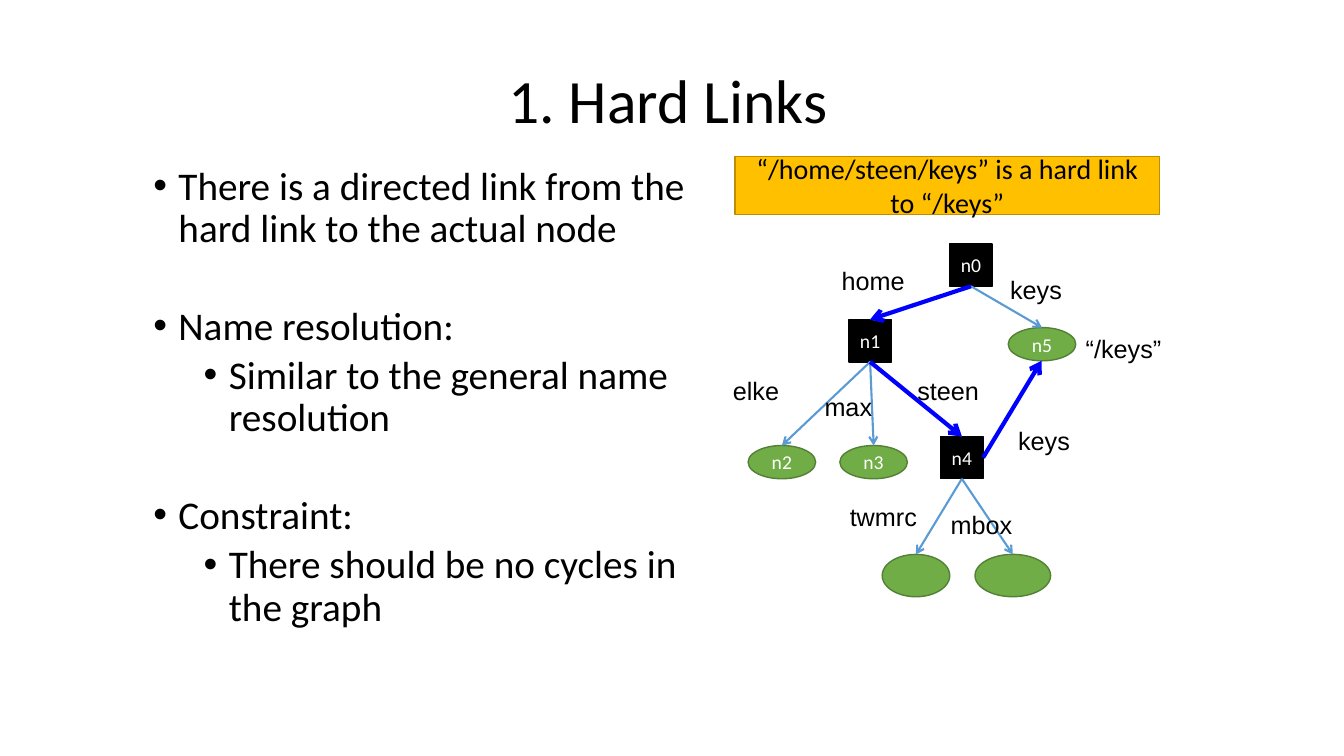
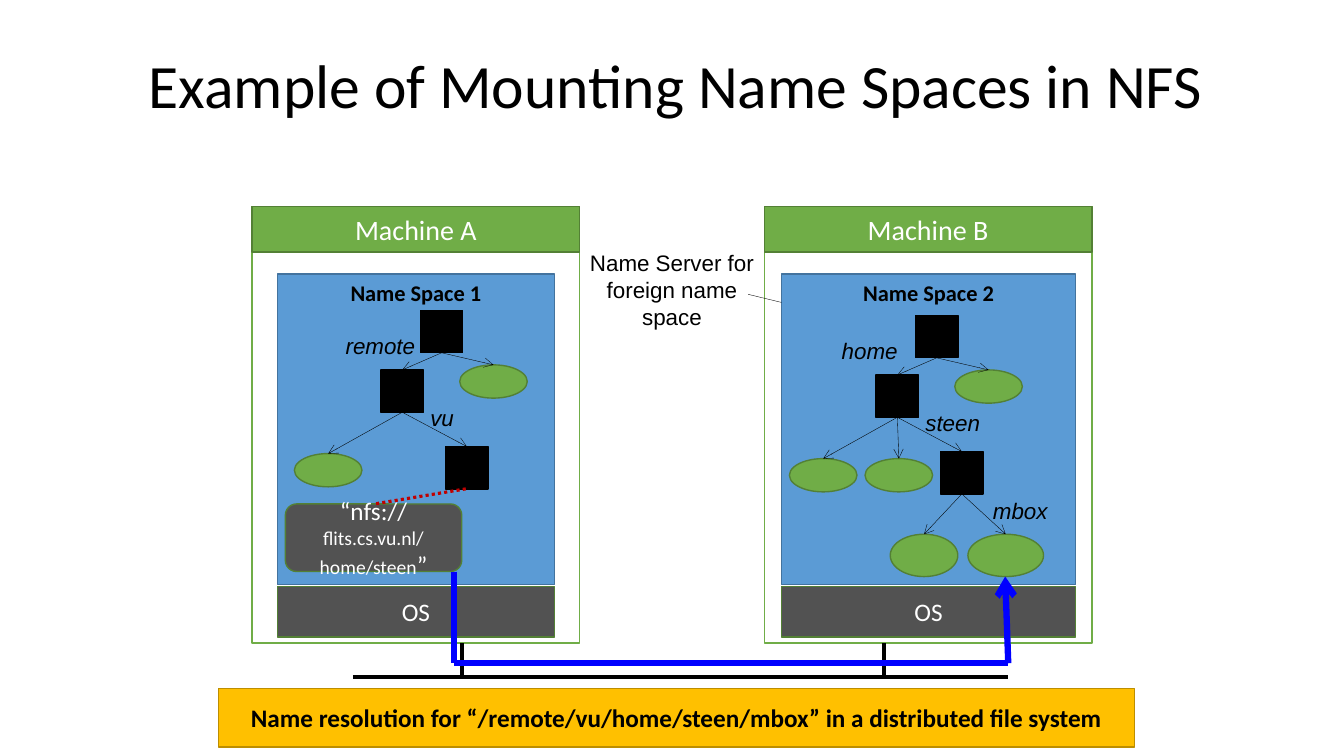
from lxml import etree
from pptx import Presentation
from pptx.dml.color import RGBColor
from pptx.enum.dml import MSO_LINE
from pptx.enum.shapes import MSO_CONNECTOR, MSO_SHAPE
from pptx.enum.text import MSO_ANCHOR, MSO_AUTO_SIZE, PP_ALIGN
from pptx.oxml.ns import qn
from pptx.util import Inches, Pt

BLACK = RGBColor(0x00, 0x00, 0x00)
WHITE = RGBColor(0xFF, 0xFF, 0xFF)
GOLD = RGBColor(0xFF, 0xC0, 0x00)
DARK_GOLD = RGBColor(0xBD, 0x8E, 0x00)
GREEN = RGBColor(0x70, 0xAD, 0x47)
DARK_GREEN = RGBColor(0x53, 0x80, 0x35)
SKY = RGBColor(0x5B, 0x9B, 0xD5)
DARK_SKY = RGBColor(0x43, 0x73, 0x9E)
GRAY = RGBColor(0x52, 0x52, 0x52)
BLUE = RGBColor(0x00, 0x00, 0xFF)
RED = RGBColor(0xC0, 0x00, 0x00)

RECT, OVAL, ROUND = MSO_SHAPE.RECTANGLE, MSO_SHAPE.OVAL, MSO_SHAPE.ROUNDED_RECTANGLE


def add_box(s, kind, x, y, w, h, runs=(), fill=None, edge=None, color=BLACK,
            font="Calibri", bold=False, italic=False,
            align=PP_ALIGN.CENTER, anchor=MSO_ANCHOR.MIDDLE):
    """Add a filled shape, or a text box if kind is None; runs are (text, size)."""
    at = [Inches(v) for v in (x, y, w, h)]
    if kind is None:
        sp = s.shapes.add_textbox(*at)
    else:
        sp = s.shapes.add_shape(kind, *at)
        sp.shadow.inherit = False
        sp.fill.solid()
        sp.fill.fore_color.rgb = fill
        sp.line.color.rgb = edge
        sp.line.width = Pt(1)
    tf = sp.text_frame
    tf.word_wrap = True
    tf.vertical_anchor = anchor
    p = tf.paragraphs[0]
    p.alignment = align
    for text, size in runs:
        r = p.add_run()
        r.text = text
        r.font.name, r.font.size = font, Pt(size)
        r.font.bold, r.font.italic = bold, italic
        r.font.color.rgb = color


def add_line(s, start, end, color, width, arrow=False, dash=None):
    c = s.shapes.add_connector(MSO_CONNECTOR.STRAIGHT,
                               *[Inches(v) for v in (*start, *end)])
    c.line.color.rgb = color
    c.line.width = Pt(width)
    if dash:
        c.line.dash_style = dash
    spPr = c.element.spPr
    if arrow:
        etree.SubElement(spPr.find(qn("a:ln")), qn("a:tailEnd"), type="arrow")
    etree.SubElement(spPr, qn("a:effectLst"))


prs = Presentation()
prs.slide_width, prs.slide_height = Inches(13.33), Inches(7.5)

# Titles
slides = []
for layout, title, at in [
    (1, "1. Hard Links", (1.92, 0.3, 9.41, 1.45)),
    (5, "Example of Mounting Name Spaces in NFS", (0.83, 0.3, 11.75, 1.15)),
]:
    s = prs.slides.add_slide(prs.slide_layouts[layout])
    sp = s.shapes.title
    sp.left, sp.top, sp.width, sp.height = [Inches(v) for v in at]
    tf = sp.text_frame
    tf.auto_size = MSO_AUTO_SIZE.NONE
    tf.vertical_anchor = MSO_ANCHOR.MIDDLE
    p = tf.paragraphs[0]
    p.alignment = PP_ALIGN.CENTER
    p.line_spacing = 0.9
    r = p.add_run()
    r.text = title
    r.font.name, r.font.size = "Calibri", Pt(44)
    r.font.color.rgb = BLACK
    slides.append(s)
links, mounting = slides

# Bullets on hard links
sp = links.placeholders[1]
sp.left, sp.top, sp.width, sp.height = [Inches(v) for v in (0.92, 1.6, 6.25, 5.42)]
tf = sp.text_frame
tf.auto_size = MSO_AUTO_SIZE.NONE
for i, (level, before, text) in enumerate([
    (0, 0, "There is a directed link from the hard link to the actual node"),
    (0, 39.5, "Name resolution:"),
    (1, 5, "Similar to the general name resolution"),
    (0, 39.5, "Constraint:"),
    (1, 5, "There should be no cycles in the graph"),
]):
    p = tf.add_paragraph() if i else tf.paragraphs[0]
    p.level = level
    pPr = p._p.get_or_add_pPr()
    pPr.set("marL", str(Inches(0.75 + 0.5 * level)))
    pPr.set("indent", str(Inches(-0.25)))
    etree.SubElement(pPr, qn("a:buChar"), char="•")
    p.line_spacing = 0.9
    p.space_before = Pt(before)
    r = p.add_run()
    r.text = text
    r.font.name, r.font.size = "Calibri", Pt(28)
    r.font.color.rgb = BLACK

# Gold banners
for s, at, text, size, bold in [
    (links, (7.29, 1.55, 4.21, 0.58),
     "“/home/steen/keys” is a hard link to “/keys”", 20, False),
    (mounting, (2.17, 6.83, 9.08, 0.58),
     "Name resolution for “/remote/vu/home/steen/mbox” in a distributed file system",
     18, True),
]:
    add_box(s, RECT, *at, [(text, size)], GOLD, DARK_GOLD, bold=bold)

# Machines and the network between them
for name, space, x, inner_x, inner_w, plug_x in [
    ("Machine B", "Name Space 2", 7.58, 7.75, 2.92, 8.77),
    ("Machine A", "Name Space 1", 2.5, 2.75, 2.75, 4.58),
]:
    add_box(mounting, RECT, x, 2.05, 3.25, 4.33, fill=WHITE, edge=GREEN)
    add_box(mounting, RECT, x, 2.05, 3.25, 0.45, [(name, 20)], GREEN, DARK_GREEN, WHITE)
    add_box(mounting, RECT, inner_x, 2.72, inner_w, 3.08, [(space, 16)], SKY, DARK_SKY,
            bold=True, anchor=MSO_ANCHOR.TOP)
    add_box(mounting, RECT, inner_x, 5.82, inner_w, 0.5, [("OS", 18)], GRAY, DARK_GREEN,
            WHITE)
    add_line(mounting, (plug_x, 6.38), (plug_x, 6.72), BLACK, 3)
add_line(mounting, (3.5, 6.72), (10, 6.72), BLACK, 3)

# Naming graphs: node sizes by kind, then places relative to each graph's origin
SIZES = {"dir": (0.42, 0.42), "leaf": (0.67, 0.33),
         "tall": (0.67, 0.42), "wide": (0.75, 0.42)}
link_nodes = {
    "n0": ("dir", 9.42, 2.42), "n1": ("dir", 8.42, 3.17), "n4": ("dir", 9.33, 4.33),
    "n5": ("leaf", 10, 3.25), "n2": ("leaf", 7.42, 4.42), "n3": ("leaf", 8.33, 4.42),
    "mbox": ("wide", 9.67, 5.5), "twmrc": ("tall", 8.75, 5.5),
}
link_edges = [("n0", "n5"), ("n0", "n1"), ("n1", "n3"), ("n1", "n4"), ("n1", "n2"),
              ("n4", "mbox"), ("n4", "twmrc")]
link_labels = [
    ("home", 8.25, 2.58), ("keys", 9.92, 2.67), ("steen", 9, 3.67), ("max", 8.08, 3.83),
    ("elke", 7.17, 3.67), ("“/keys”", 10.67, 3.26), ("twmrc", 8.33, 4.92),
    ("mbox", 9.33, 5), ("keys", 10, 4.17),
]
space_nodes = {
    "root": ("dir", 1.25, 0), "top": ("dir", 0.86, 0.59), "sub": ("dir", 1.5, 1.35),
    "right": ("leaf", 1.64, 0.54), "left": ("leaf", 0, 1.42),
}
space_edges = [("root", "right"), ("root", "top"), ("top", "sub"), ("top", "left")]
home_nodes = {**space_nodes, "middle": ("leaf", 0.75, 1.42),
              "mbox": ("wide", 1.77, 2.17), "other": ("tall", 1, 2.17)}
home_edges = space_edges + [("top", "middle"), ("sub", "mbox"), ("sub", "other")]

for s, x0, y0, nodes, edges, color, width, labels, size in [
    (links, 0, 0, link_nodes, link_edges, SKY, 1.5, link_labels, 18),
    (mounting, 7.83, 3.13, home_nodes, home_edges, BLACK, 0.25,
     [("home", 0.42, 0.17), ("steen", 1.25, 0.88), ("mbox", 1.92, 1.75)], 16),
    (mounting, 2.92, 3.08, space_nodes, space_edges, BLACK, 0.25,
     [("remote", 0.41, 0.17), ("vu", 1.25, 0.88)], 16),
]:
    tops, bottoms = {}, {}
    for name, (kind, dx, dy) in nodes.items():
        x, y = x0 + dx, y0 + dy
        w, h = SIZES[kind]
        tops[name], bottoms[name] = (x + w / 2, y), (x + w / 2, y + h)
        runs = [(name, 14)] if name.startswith("n") else []
        if kind == "dir":
            add_box(s, RECT, x, y, w, h, runs, BLACK, BLACK, WHITE)
        else:
            add_box(s, OVAL, x, y, w, h, runs, GREEN, DARK_GREEN, WHITE)
    for parent, child in edges:
        add_line(s, bottoms[parent], tops[child], color, width, arrow=True)
    for text, dx, dy in labels:
        add_box(s, None, x0 + dx, y0 + dy, 1, 0.4, [(text, size)], font="Arial",
                italic=s is mounting, align=PP_ALIGN.LEFT, anchor=MSO_ANCHOR.TOP)

# Path along the hard link
for start, end in [((9.63, 2.84), (8.63, 3.17)), ((8.63, 3.59), (9.54, 4.33)),
                   ((9.75, 4.54), (10.33, 3.58))]:
    add_line(links, start, end, BLUE, 3, arrow=True)

# Mount point and the path to the foreign name space
add_box(mounting, ROUND, 2.83, 5, 1.75, 0.67,
        [("“nfs://", 18), ("flits.cs.vu.nl/home/steen", 14), ("”", 18)],
        GRAY, DARK_GREEN, WHITE)
add_line(mounting, (4.62, 4.85), (3.71, 5), RED, 2.25, dash=MSO_LINE.ROUND_DOT)
route = [(4.5, 5.67), (4.5, 6.58), (10, 6.58), (9.97, 5.72)]
for i, (start, end) in enumerate(zip(route, route[1:])):
    add_line(mounting, start, end, BLUE, 4.5, arrow=i == 2)

add_box(mounting, None, 5.75, 2.42, 1.83, 0.91,
        [("Name Server for foreign name space", 16)], font="Arial",
        anchor=MSO_ANCHOR.TOP)
add_line(mounting, (7.75, 3), (7.42, 2.92), BLACK, 0.25)

prs.save("out.pptx")
